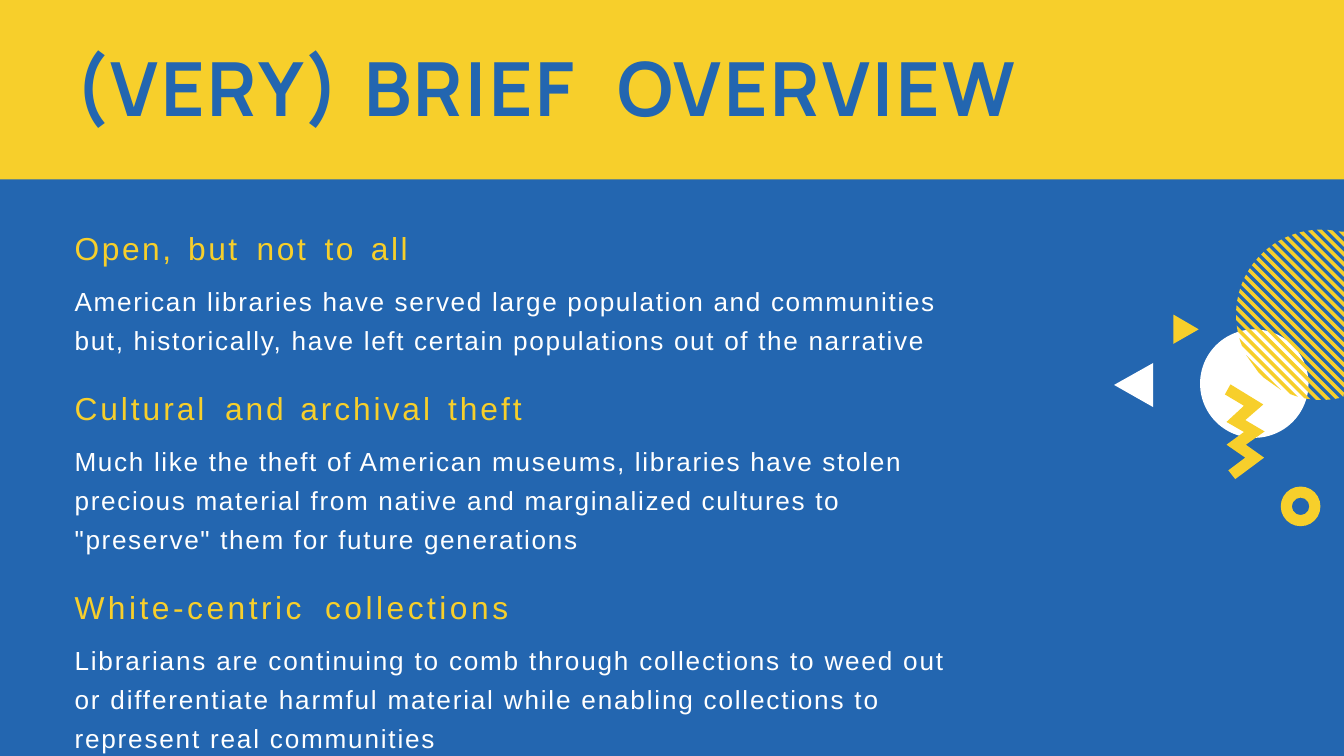
from dataclasses import dataclass
from math import sqrt

from lxml import etree
from pptx import Presentation
from pptx.dml.color import RGBColor
from pptx.enum.shapes import MSO_SHAPE
from pptx.enum.text import MSO_ANCHOR, PP_ALIGN
from pptx.oxml.ns import qn
from pptx.util import Cm, Pt

RECT = MSO_SHAPE.RECTANGLE
OVAL = MSO_SHAPE.OVAL
DONUT = MSO_SHAPE.DONUT
LEFT = PP_ALIGN.LEFT
TOP = MSO_ANCHOR.TOP
WIDTH = 50.8


@dataclass(frozen=True)
class Theme:
    blue: RGBColor = RGBColor(0x23, 0x66, 0xB0)
    gold: RGBColor = RGBColor(0xF7, 0xCF, 0x2B)
    white: RGBColor = RGBColor(0xFF, 0xFF, 0xFF)
    display: str = "Manrope"
    text: str = "Arial"
    title: int = 80
    head: int = 34
    body: int = 28


@dataclass(frozen=True)
class Topic:
    head: str
    tabs: tuple[float, ...]
    track: float
    body: str
    pace: float
    margin: float = 0


THEME = Theme()

TOPICS = [
    Topic("Open,\tbut\tnot\tto\tall", (4.29, 6.88, 9.45, 11.2), 2.8,
          "American libraries have served large population and communities "
          "but, historically, have left certain populations out of the "
          "narrative", 1.8, 7.4),
    Topic("Cultural\tand\tarchival\ttheft", (5.69, 8.53, 14.12), 3.2,
          "Much like the theft of American museums, libraries have stolen "
          "precious material from native and marginalized cultures to "
          "\"preserve\" them for future generations", 1.8, 7.4),
    Topic("White-centric\tcollections", (9.47,), 3.8,
          "Librarians are continuing to comb through collections to weed out "
          "or differentiate harmful material while enabling collections to "
          "represent real communities", 1.95),
]

ZIGZAG = [
    (46.51, 14.53), (47.75, 15.29), (47.07, 15.88), (47.8, 16.31),
    (47.09, 16.81), (47.78, 17.3), (46.69, 18.11), (46.43, 17.78),
    (47.07, 17.3), (46.36, 16.81), (47.02, 16.33), (46.36, 15.95),
    (47.02, 15.34), (46.3, 14.91),
]
LARGE = [(43.59, 13.72), (43.59, 15.39), (42.11, 14.55)]
SMALL = [(44.35, 11.89), (45.31, 12.45), (44.35, 13)]


def paint(shape, color: RGBColor) -> None:
    shape.shadow.inherit = False
    shape.fill.solid()
    shape.fill.fore_color.rgb = color
    shape.line.fill.background()


def add_form(slide, kind, box: tuple, color: RGBColor):
    form = slide.shapes.add_shape(kind, *(Cm(n) for n in box))
    paint(form, color)
    return form


def add_outline(slide, parts: list, color: RGBColor) -> None:
    """Draw closed polygons, given in cm, as one shape."""
    parts = [[(Cm(x), Cm(y)) for x, y in part] for part in parts]
    pen = slide.shapes.build_freeform(*parts[0][0])
    pen.add_line_segments(parts[0][1:])
    for part in parts[1:]:
        pen.move_to(*part[0])
        pen.add_line_segments(part[1:])
    paint(pen.convert_to_shape(), color)


def chord(shift: float, x: float, y: float, r: float) -> list:
    """Ends of a 45-degree line across a circle, cut at the slide's edge."""
    reach = sqrt(2 * r * r - shift * shift)
    ends = []
    for way in (-reach, reach):
        right = min(x + (way + shift) / 2, WIDTH)
        ends.append((right, right - x - shift + y))
    return ends


def stripes(x: float, y: float, r: float) -> list:
    first, pitch, thick, count = -4.36, 0.38, 0.19, 23
    parts = []
    for i in range(count):
        shift = first + i * pitch
        upper = chord(shift, x, y, r)
        lower = chord(shift - thick, x, y, r)
        parts.append(upper + lower[::-1])
    return parts


def style(para, face: str, size: int, color: RGBColor, track: float,
          tabs: tuple = (), margin: float = 0) -> None:
    """Set font, letter spacing in points, tab stops and right margin in cm."""
    para.alignment = LEFT
    para.font.name = face
    para.font.size = Pt(size)
    para.font.color.rgb = color
    props = para._p.get_or_add_pPr()
    font = props.get_or_add_defRPr()
    font.set("spc", str(round(track * 100)))
    if margin:
        props.set("marR", str(Cm(margin)))
    if tabs:
        stops = etree.Element(qn("a:tabLst"))
        for tab in tabs:
            etree.SubElement(stops, qn("a:tab"), pos=str(Cm(tab)), algn="l")
        font.addprevious(stops)


def set_frame(shape, box: tuple, top: float = 0):
    shape.left, shape.top, shape.width, shape.height = (Cm(n) for n in box)
    frame = shape.text_frame
    frame.word_wrap = True
    frame.vertical_anchor = TOP
    frame.margin_left = frame.margin_right = frame.margin_bottom = 0
    frame.margin_top = Cm(top)
    return frame


def add_title(slide) -> None:
    title = slide.shapes.title
    band = add_form(slide, RECT, (0, 0, WIDTH, 6.78), THEME.gold)
    title._element.addprevious(band._element)
    frame = set_frame(title, (2.82, 1.57, 36.7, 3.45))
    para = frame.paragraphs[0]
    para.text = "(VERY)\tBRIEF\tOVERVIEW"
    style(para, THEME.display, THEME.title, THEME.blue, 2.8, (10.95, 20.52))
    para.font.bold = True


def add_topics(slide) -> None:
    box = (2.82, 7.8, 41.22, 19.25)
    frame = set_frame(slide.shapes.add_textbox(0, 0, 0, 0), box, 0.86)
    for i, topic in enumerate(TOPICS):
        head = frame.add_paragraph() if i else frame.paragraphs[0]
        head.text = topic.head
        head.space_before = Pt(35 if i else 0)
        style(head, THEME.text, THEME.head, THEME.gold, topic.track, topic.tabs)
        body = frame.add_paragraph()
        body.text = topic.body
        body.space_before = Pt(11.2)
        body.line_spacing = 1.25
        style(body, THEME.text, THEME.body, THEME.white, topic.pace,
              margin=topic.margin)


def add_decor(slide) -> None:
    ring = add_form(slide, DONUT, (48.41, 18.39, 1.5, 1.5), THEME.gold)
    ring.adjustments[0] = 0.28
    add_outline(slide, [LARGE], THEME.white)
    add_form(slide, OVAL, (45.36, 12.45, 4.1, 4.1), THEME.white)
    disc = stripes(49.94, 11.9, 3.22)
    add_outline(slide, [SMALL, ZIGZAG, *disc], THEME.gold)


def main() -> None:
    deck = Presentation()
    deck.slide_width = Cm(WIDTH)
    deck.slide_height = Cm(WIDTH * 9 / 16)
    slide = deck.slides.add_slide(deck.slide_layouts[5])
    slide.background.fill.solid()
    slide.background.fill.fore_color.rgb = THEME.blue
    add_title(slide)
    add_topics(slide)
    add_decor(slide)
    deck.save("out.pptx")


if __name__ == "__main__":
    main()
